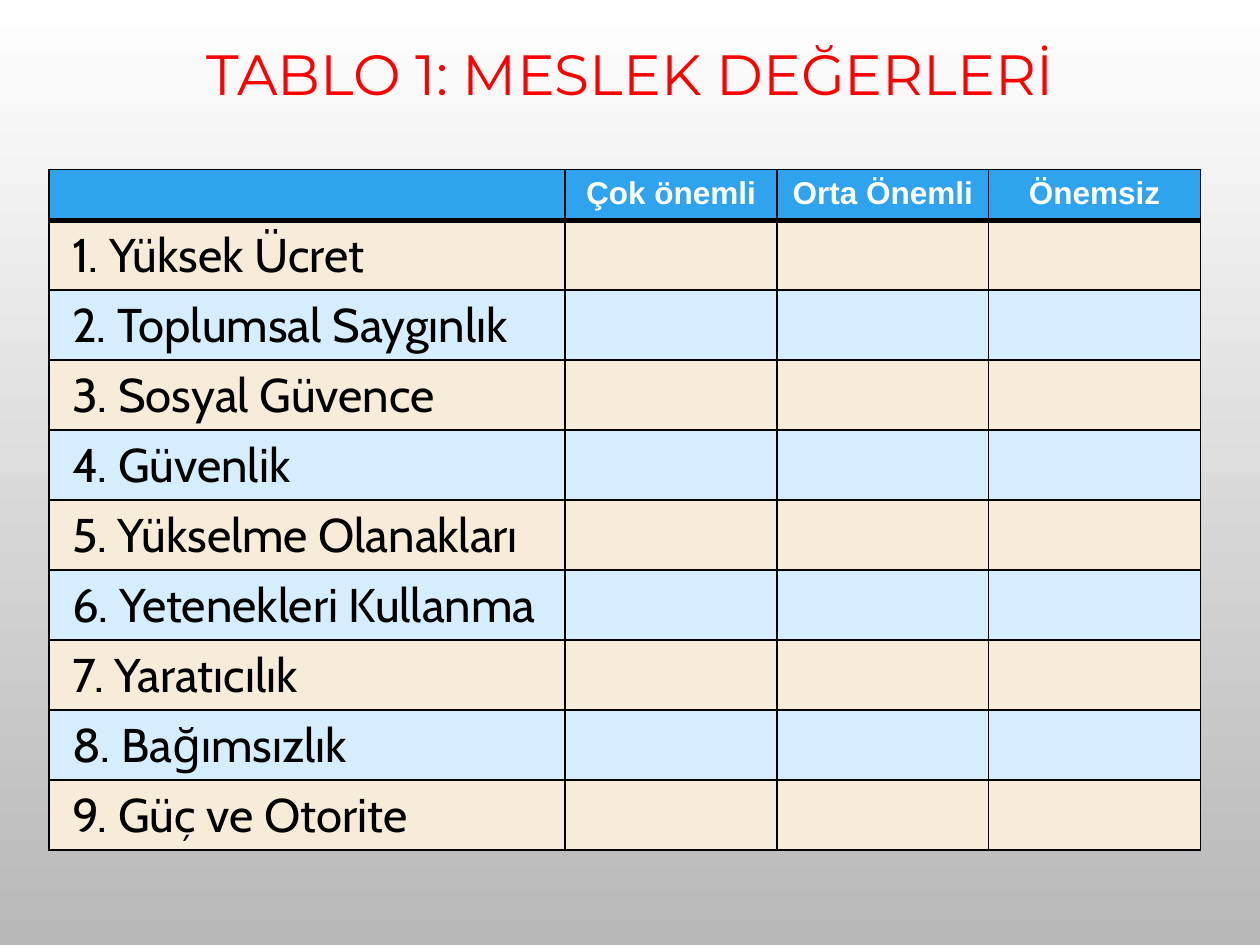
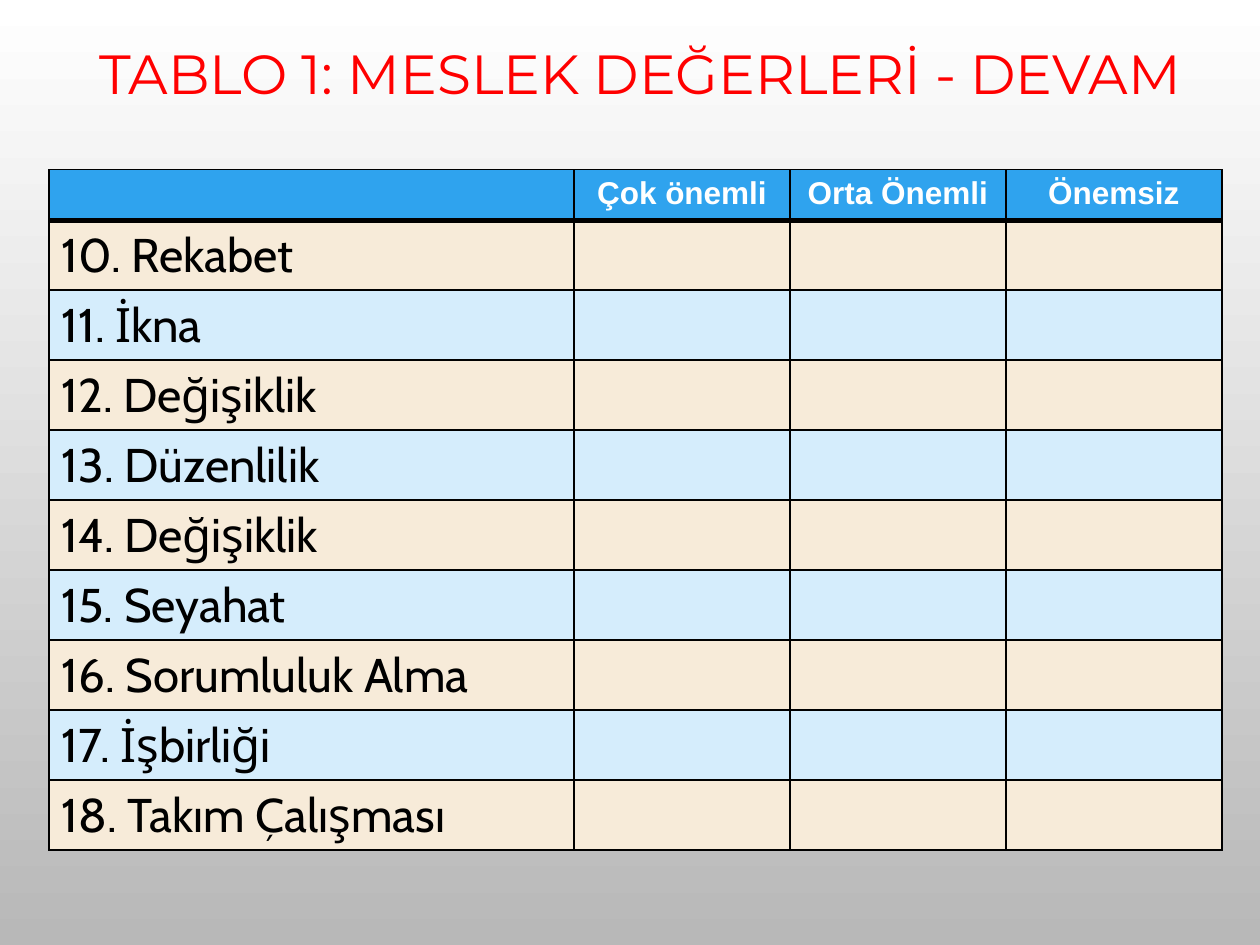
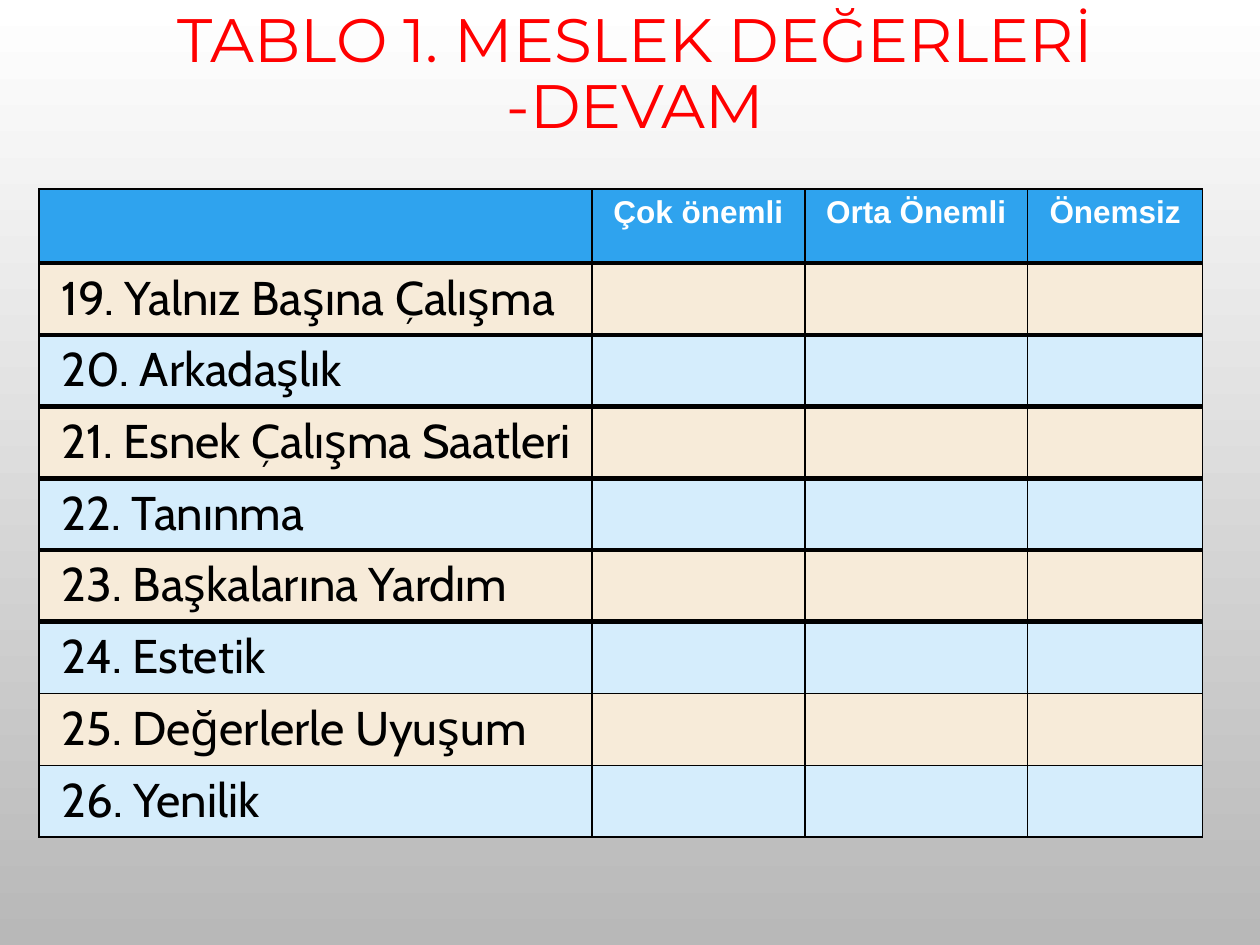
from dataclasses import dataclass
from lxml.etree import SubElement
from pptx import Presentation
from pptx.dml.color import RGBColor
from pptx.enum.text import MSO_ANCHOR, PP_ALIGN
from pptx.oxml.ns import qn
from pptx.util import Pt


@dataclass(frozen=True)
class Theme:
    red: str = "FF0000"
    blue: str = "2FA3EE"
    cream: str = "F7EBD9"
    pale: str = "D5EDFC"
    white: str = "FFFFFF"
    grey: str = "B8B8B8"
    black: str = "000000"
    thin: int = 1
    thick: int = 3
    row: int = 27
    head: int = 18


THEME = Theme()
HEADS = ["", "Çok önemli", "Orta Önemli", "Önemsiz"]

# Per slide: title (box, size), table place, column and row sizes,
# count of thick rules under the header, left margin and indent of items
SLIDES = [
    dict(title="TABLO 1: MESLEK DEĞERLERİ", box=(36, 21.6, 648, 44.6), size=32.4,
         at=(28, 97), cols=(295, 121, 121, 121), high=(28.8, 40), heavy=1,
         indent=(6, 0), first=1,
         items=["Yüksek Ücret", "Toplumsal Saygınlık", "Sosyal Güvence", "Güvenlik",
                "Yükselme Olanakları", "Yetenekleri Kullanma", "Yaratıcılık",
                "Bağımsızlık", "Güç ve Otorite"]),
    dict(title="TABLO 1: MESLEK DEĞERLERİ - DEVAM", box=(28, 21.6, 675.4, 44.6), size=31.5,
         at=(28, 97), cols=(300, 123.4, 123.4, 123.4), high=(28.8, 40), heavy=1,
         indent=(28, -28), first=10,
         items=["Rekabet", "İkna", "Değişiklik", "Düzenlilik", "Değişiklik", "Seyahat",
                "Sorumluluk Alma", "İşbirliği", "Takım Çalışması"]),
    dict(title="TABLO 1. MESLEK DEĞERLERİ -DEVAM", box=(28, 0, 670.3, 86.4), size=35,
         at=(22.2, 108), cols=(316, 121.7, 127.4, 100), high=(42.4, 41), heavy=6,
         indent=(6, 0), first=19,
         items=["Yalnız Başına Çalışma", "Arkadaşlık", "Esnek Çalışma Saatleri", "Tanınma",
                "Başkalarına Yardım", "Estetik", "Değerlerle Uyuşum", "Yenilik"]),
]


def style(font, color, **look):
    for key, value in look.items():
        setattr(font, key, value)
    font.color.rgb = RGBColor.from_string(color)


def write(para, text, color, **look):
    run = para.add_run()
    run.text = text
    style(run.font, color, **look)


def shade(slide):
    fill = slide.background.fill
    fill.gradient()
    fill.gradient_angle = 270
    for stop, place, color in zip(fill.gradient_stops, (0, 1), (THEME.white, THEME.grey)):
        stop.position = place
        stop.color.rgb = RGBColor.from_string(color)


def add_title(slide, text, box, size):
    frame = slide.shapes.add_textbox(*map(Pt, box)).text_frame
    frame.word_wrap = True
    frame.vertical_anchor = MSO_ANCHOR.MIDDLE
    para = frame.paragraphs[0]
    para.alignment = PP_ALIGN.CENTER
    para.line_spacing = 0.9
    write(para, text, THEME.red, name="Montserrat", size=Pt(size))


def rule(cell, top, bottom):
    sides = dict(L=THEME.thin, R=THEME.thin, T=top, B=bottom)
    props = cell._tc.get_or_add_tcPr()
    for side, width in sides.items():
        line = SubElement(props, qn(f"a:ln{side}"), w=str(Pt(width)))
        solid = SubElement(line, qn("a:solidFill"))
        SubElement(solid, qn("a:srgbClr"), val=THEME.black)


def paint(cell, color):
    cell.fill.solid()
    cell.fill.fore_color.rgb = RGBColor.from_string(color)


def add_grid(slide, at, cols, high, heavy, indent, first, items):
    count = len(items) + 1
    total = high[0] + high[1] * len(items)
    place = map(Pt, (*at, sum(cols), total))
    table = slide.shapes.add_table(count, len(cols), *place).table
    table.first_row = table.horz_banding = False
    for col, width in zip(table.columns, cols):
        col.width = Pt(width)

    # Fills and borders
    for r, row in enumerate(table.rows):
        row.height = Pt(high[min(r, 1)])
        top = THEME.thick if 1 <= r <= heavy else THEME.thin
        bottom = THEME.thick if r < heavy else THEME.thin
        color = (THEME.pale, THEME.cream)[r % 2] if r else THEME.blue
        for cell in row.cells:
            rule(cell, top, bottom)
            paint(cell, color)

    # Column heads
    for c, text in enumerate(HEADS):
        if text:
            para = table.cell(0, c).text_frame.paragraphs[0]
            para.alignment = PP_ALIGN.CENTER
            write(para, text, THEME.white, name="Arial", size=Pt(THEME.head), bold=True)

    # Numbered values
    for r, text in enumerate(items, 1):
        para = table.cell(r, 0).text_frame.paragraphs[0]
        for key, value in zip(("marL", "indent"), indent):
            para._p.get_or_add_pPr().set(key, str(Pt(value)))
        write(para, f"{first + r - 1}. {text}", THEME.black,
              name="Cabin", size=Pt(THEME.row), bold=False)


def main():
    deck = Presentation()
    deck.slide_width, deck.slide_height = Pt(720), Pt(540)
    for data in SLIDES:
        slide = deck.slides.add_slide(deck.slide_layouts[6])
        shade(slide)
        grid = dict(data)
        add_title(slide, grid.pop("title"), grid.pop("box"), grid.pop("size"))
        add_grid(slide, **grid)
    deck.save("out.pptx")


if __name__ == "__main__":
    main()
